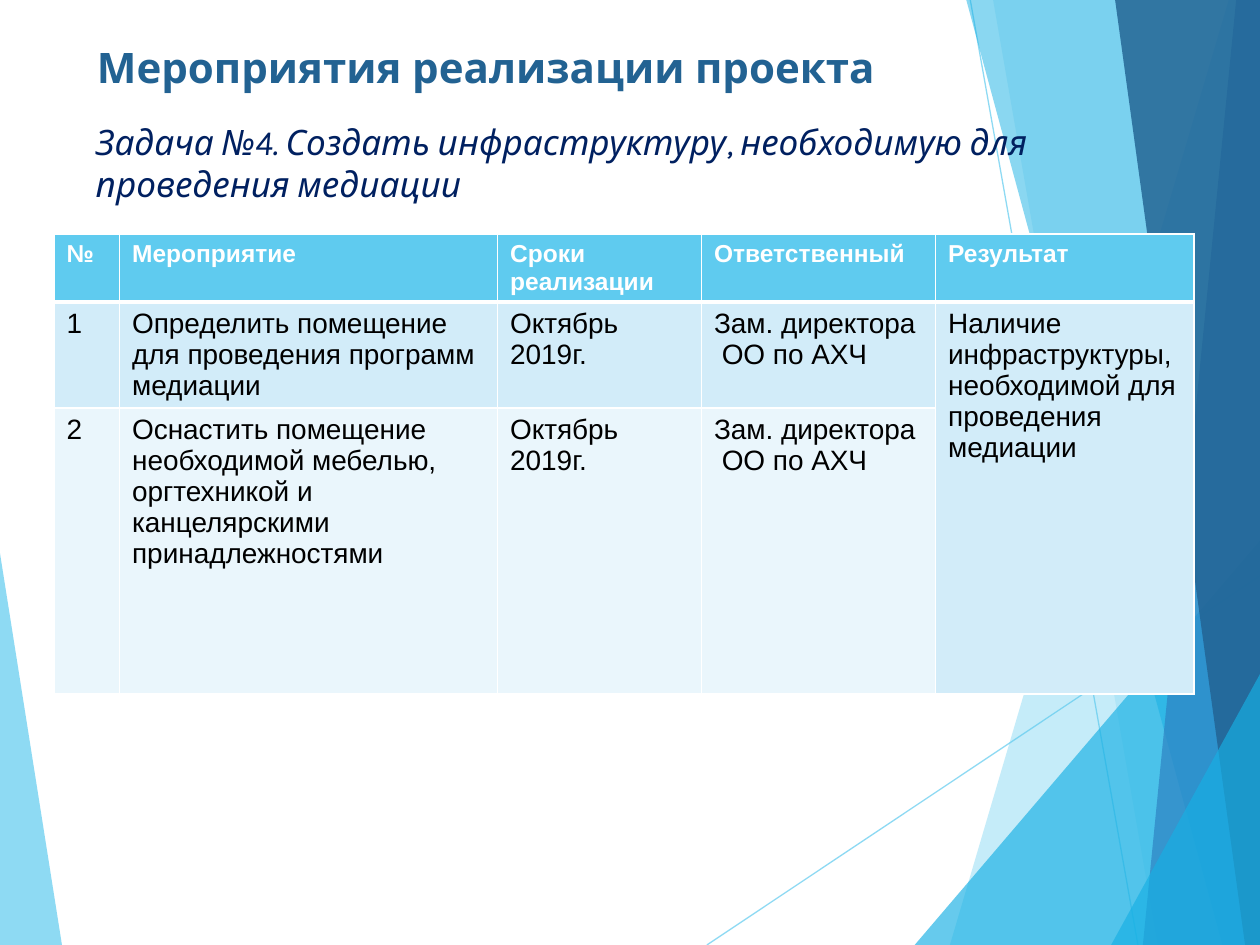
import pptx
import pptx.dml.color
import pptx.enum.shapes
import pptx.enum.text
import pptx.oxml
import pptx.oxml.ns
import pptx.util
from pptx.util import Cm, Pt

COLORS = {
    "sky": "5FCBEF", "cyan": "17B0E4", "blue": "2E83C3", "steel": "226292",
    "navy": "002060", "white": "FFFFFF", "black": "000000",
    "odd": "D2ECF9", "even": "EAF6FC",
}
WIDTH, HEIGHT = 25.4, 19.05
# top x, top y, bottom x, colour, opacity in percent
BANDS = [
    (24.77, 0, 19.15, "sky", 36),
    (20.02, 0, 23.34, "sky", 20),
    (WIDTH, 10.9, 18.44, "cyan", 66),
    (19.48, 0, 24.64, "cyan", 50),
    (24.92, 0, 23.04, "blue", 70),
    (22.48, 0, 25.1, "steel", 82),
    (WIDTH, 13.59, 22.4, "cyan", 66),
]
RAYS = [(14.25, HEIGHT, WIDTH, 11.61), (19.56, 0, 22.94, HEIGHT)]
COLUMNS = [1.32, 7.62, 4.11, 4.72, 5.21]
ROWS = [0.99, 2.06, 5.77]
CELLS = [
    ["№", "Мероприятие", "Сроки реализации", "Ответственный", "Результат"],
    ["1", "Определить помещение для проведения программ медиации",
     "Октябрь 2019г.", "Зам. директора  ОО по АХЧ",
     "Наличие инфраструктуры, необходимой для проведения медиации"],
    ["2", "Оснастить помещение необходимой мебелью, оргтехникой и "
     "канцелярскими принадлежностями",
     "Октябрь 2019г.", "Зам. директора  ОО по АХЧ", ""],
]


def rgb(name):
    return pptx.dml.color.RGBColor.from_string(COLORS[name])


def set_opacity(fill_parent, percent):
    """Add an alpha value to every solid colour below the element."""
    for clr in fill_parent.iter(pptx.oxml.ns.qn("a:srgbClr")):
        pptx.oxml.ns  # namespace prefixes are resolved by qn
        alpha = clr.makeelement(pptx.oxml.ns.qn("a:alpha"), {"val": str(percent * 1000)})
        clr.append(alpha)


def format_text(tf, font, size, color, bold=False, italic=False):
    for p in tf.paragraphs:
        for r in p.runs:
            r.font.name, r.font.size = font, Pt(size)
            r.font.bold, r.font.italic = bold, italic
            r.font.color.rgb = rgb(color)


def add_polygon(s, left, top, points, color, opacity):
    """Draw a translucent polygon; points are in cm from left and top."""
    pts = [(Cm(left + x), Cm(top + y)) for x, y in points]
    builder = s.shapes.build_freeform(*pts[0])
    builder.add_line_segments(pts[1:], close=True)
    sp = builder.convert_to_shape()
    sp.shadow.inherit = False
    sp.fill.solid()
    sp.fill.fore_color.rgb = rgb(color)
    sp.line.fill.background()
    set_opacity(sp._element.spPr, opacity)


def add_ray(s, left, top, ray):
    x1, y1, x2, y2 = ray
    line = s.shapes.add_connector(
        pptx.enum.shapes.MSO_CONNECTOR.STRAIGHT,
        Cm(left + x1), Cm(top + y1), Cm(left + x2), Cm(top + y2))
    line.line.width = Pt(0.75)
    line.line.color.rgb = rgb("sky")
    spPr = line._element.spPr
    set_opacity(spPr, 70)
    spPr.append(spPr.makeelement(pptx.oxml.ns.qn("a:effectLst"), {}))


def add_background(s, left, top, width, height):
    add_polygon(s, left, top, [(0, 11.15), (1.25, height), (0, height)], "sky", 70)
    for ray in RAYS:
        add_ray(s, left, top, ray)
    for x1, y1, x2, color, opacity in BANDS:
        points = [(x1, y1), (x2, height), (width, height), (width, y1)]
        add_polygon(s, left, top, points, color, opacity)


def place_text(sp, left, top, width, height, text):
    sp.left, sp.top, sp.width, sp.height = Cm(left), Cm(top), Cm(width), Cm(height)
    tf = sp.text_frame
    tf.word_wrap = True
    tf.auto_size = pptx.enum.text.MSO_AUTO_SIZE.NONE
    tf.vertical_anchor = pptx.enum.text.MSO_ANCHOR.TOP
    tf.text = text
    tf.paragraphs[0].alignment = pptx.enum.text.PP_ALIGN.LEFT
    return tf


def add_heading(s, left, top, width):
    title = s.shapes.title
    s.shapes._spTree.append(title._element)  # in front of the background
    tf = place_text(title, left, top, width, 1.6, "Мероприятия реализации проекта")
    format_text(tf, "Karla", 24, "steel", bold=True)


def add_task(s, left, top, width, height):
    sp = s.shapes.add_textbox(0, 0, 0, 0)
    tf = place_text(sp, left, top, width, height,
                    "Задача №4. Создать инфраструктуру, необходимую для проведения медиации")
    format_text(tf, "Karla", 20, "navy", italic=True)


def set_borders(cell, widths):
    """Give white borders to a cell; widths are in points by side."""
    tcPr = cell._tc.get_or_add_tcPr()
    for i, (side, width) in enumerate(widths.items()):
        tcPr.insert(i, pptx.oxml.parse_xml(
            f'<a:ln{side} {pptx.oxml.ns.nsdecls("a")} w="{Pt(width)}"><a:solidFill>'
            f'<a:srgbClr val="{COLORS["white"]}"/></a:solidFill></a:ln{side}>'))


def add_schedule(s, left, top):
    frame = s.shapes.add_table(len(ROWS), len(COLUMNS), Cm(left), Cm(top),
                               Cm(sum(COLUMNS)), Cm(sum(ROWS)))
    table = frame.table
    for column, width in zip(table.columns, COLUMNS):
        column.width = Cm(width)
    for row, height in zip(table.rows, ROWS):
        row.height = Cm(height)
    for i, texts in enumerate(CELLS):
        for j, text in enumerate(texts):
            cell = table.cell(i, j)
            cell.text = text
            cell.fill.solid()
            cell.fill.fore_color.rgb = rgb(("sky", "odd", "even")[i])
            set_borders(cell, {"L": 1, "R": 1, "T": 3 if i == 1 else 1,
                               "B": 3 if i == 0 else 1})
            if i == 0:
                format_text(cell.text_frame, "Arial", 14, "white", bold=True)
            else:
                format_text(cell.text_frame, "Arial", 16, "black")
    last = len(COLUMNS) - 1
    table.cell(1, last).merge(table.cell(2, last))


def main():
    prs = pptx.Presentation()
    prs.slide_width, prs.slide_height = Cm(WIDTH), Cm(HEIGHT)
    s = prs.slides.add_slide(prs.slide_layouts.get_by_name("Title Only"))
    add_background(s, 0, 0, WIDTH, HEIGHT)
    add_heading(s, 1.7, 0.71, 17.63)
    add_task(s, 1.68, 2.31, 22.4, 13.39)
    add_schedule(s, 1.09, 4.72)
    prs.save("out.pptx")


if __name__ == "__main__":
    main()
